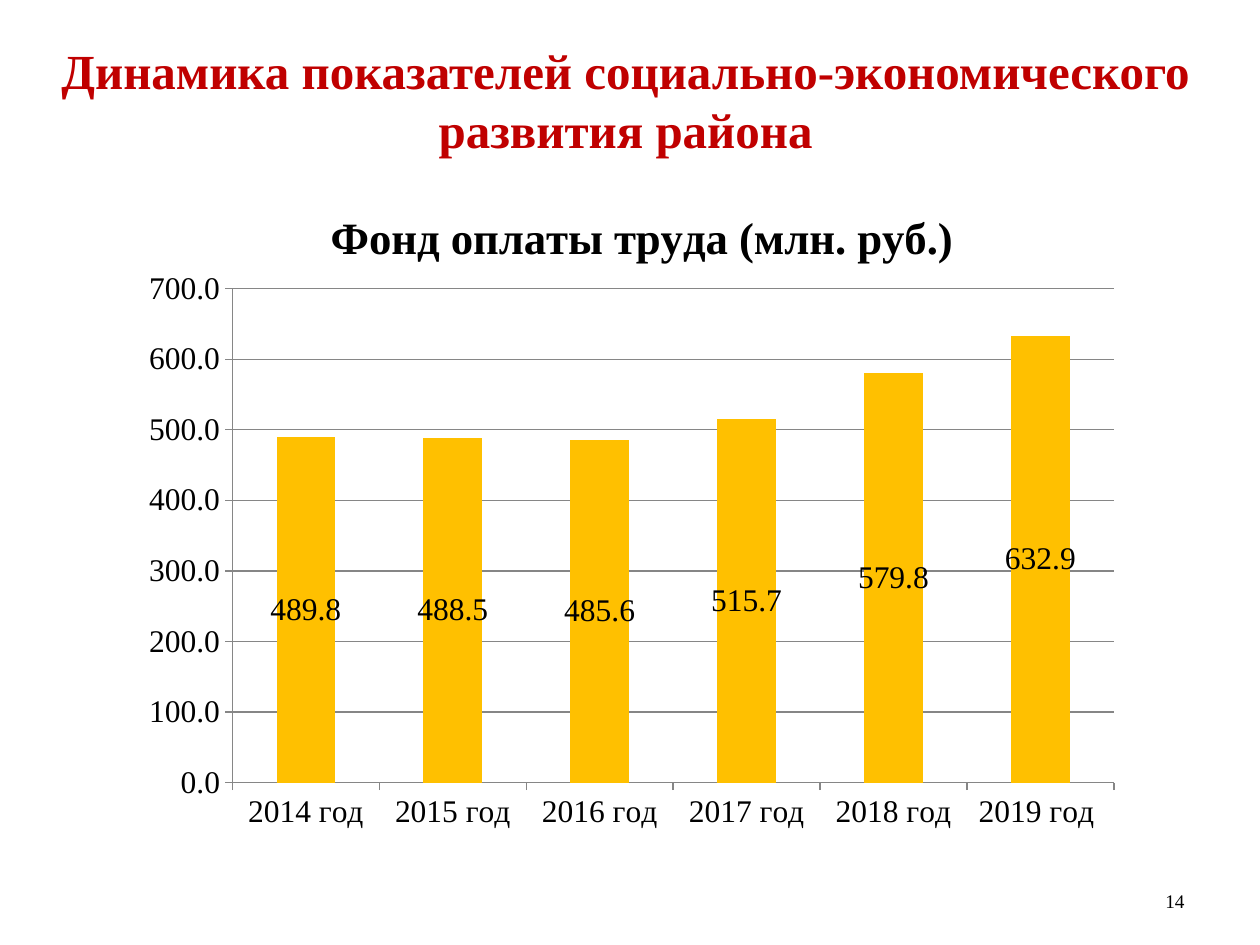
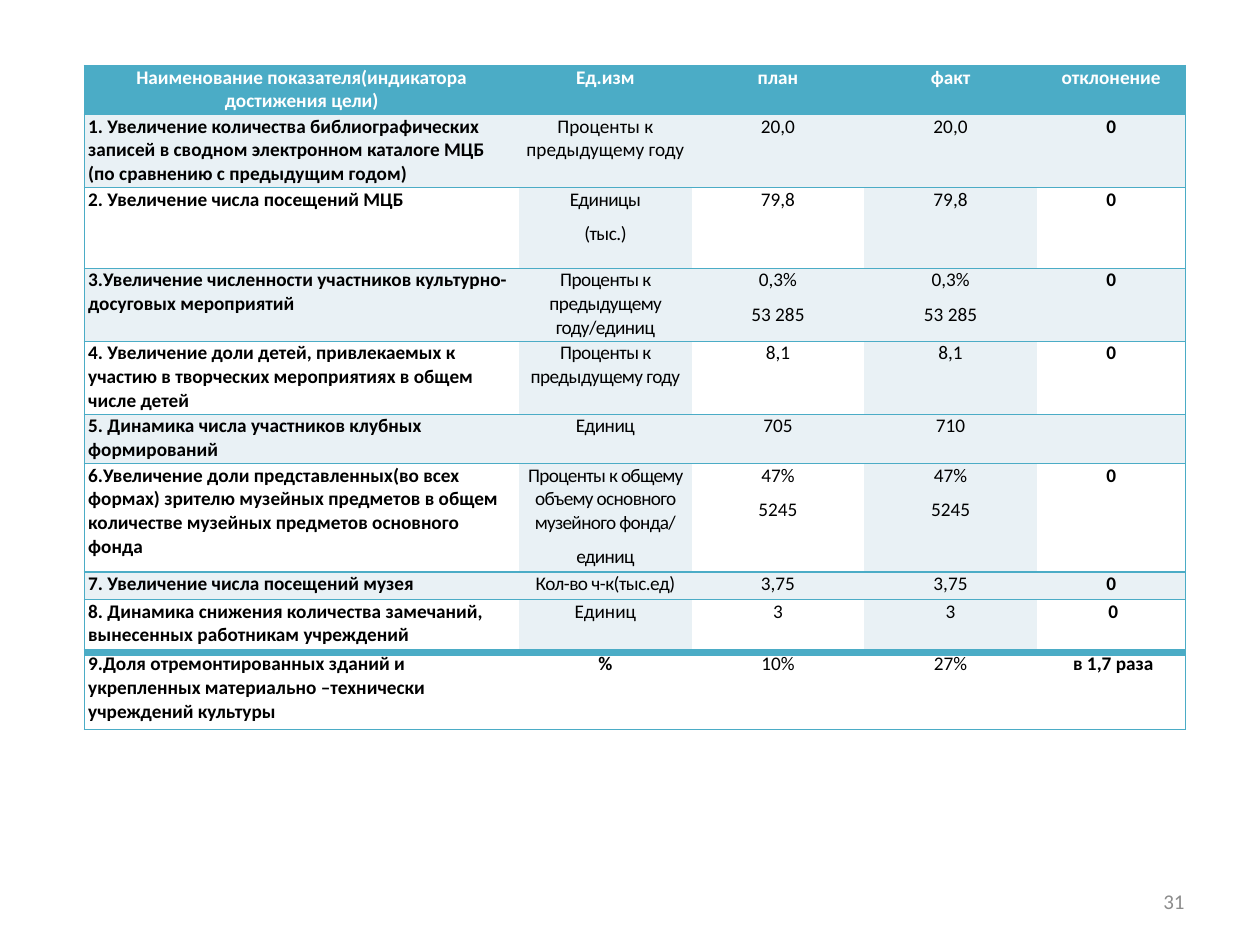
"""Build a wage fund chart slide and a culture indicators table slide."""
import pptx
import pptx.chart.data
import pptx.dml.color
import pptx.enum.chart
import pptx.enum.text
import pptx.oxml
import pptx.oxml.ns
import pptx.util
from pptx.util import Inches, Pt

COLORS = {
    "title": "C00000", "text": "000000", "page": "8C8C8C", "bar": "FFC000",
    "axis": "868686", "teal": "4BACC6", "band": "E9F1F5", "white": "FFFFFF",
}
SERIF = "Times New Roman"
SANS = "Calibri"

TITLE = "Динамика показателей социально-экономического развития района"
CHART_TITLE = "Фонд оплаты труда (млн. руб.)"
WAGE_FUND = {
    "2014 год": 489.8, "2015 год": 488.5, "2016 год": 485.6,
    "2017 год": 515.7, "2018 год": 579.8, "2019 год ": 632.9,
}

HEADER = ("Наименование показателя(индикатора достижения цели)",
          "Ед.изм", "план", "факт", "отклонение")
INDICATORS = [
    ("1. Увеличение количества библиографических записей в сводном электронном "
     "каталоге МЦБ (по сравнению с предыдущим годом)",
     "Проценты к предыдущему году", "20,0", "20,0", "0"),
    ("2. Увеличение числа посещений МЦБ", "Единицы\n(тыс.)", "79,8", "79,8", "0"),
    ("3.Увеличение численности участников культурно-досуговых мероприятий",
     "Проценты к предыдущему году/единиц", "0,3%\n53 285", "0,3%\n53 285", "0"),
    ("4. Увеличение доли детей, привлекаемых к участию в творческих мероприятиях "
     "в общем числе детей", "Проценты к предыдущему году", "8,1", "8,1", "0"),
    ("5. Динамика числа участников клубных формирований", "Единиц", "705", "710", ""),
    ("6.Увеличение доли представленных(во всех формах) зрителю музейных предметов "
     "в общем количестве музейных предметов основного фонда",
     "Проценты к общему объему основного музейного фонда/\nединиц",
     "47%\n5245", "47%\n5245", "0"),
    ("7. Увеличение числа посещений музея", "Кол-во ч-к(тыс.ед)", "3,75", "3,75", "0"),
    ("8. Динамика снижения количества замечаний, вынесенных работникам учреждений",
     "Единиц", "3", "3", " 0"),
    ("9.Доля отремонтированных зданий и укрепленных материально –технически "
     "учреждений культуры", "%", "10%", "27%", " в 1,7 раза"),
]
UNIT_SPACING = (0, 0, -30, -30, -30, -30, -40, -30, 0, 0)
COLUMN_WIDTHS = (3.45, 1.37, 1.37, 1.37, 1.18)
ROW_HEIGHTS = (0.39, 0.58, 0.64, 0.58, 0.58, 0.39, 0.86, 0.22, 0.42, 0.61)
LAST_ROW = len(INDICATORS)
LAST_COLUMN = len(HEADER) - 1
NO_STYLE = "{2D5ABB26-0587-4C30-8999-92F81FD0307C}"


def rgb(name):
    return pptx.dml.color.RGBColor.from_string(COLORS[name])


def style_font(font, name, size, color="text", bold=False):
    font.name, font.size, font.bold = name, Pt(size), bold
    font.color.rgb = rgb(color)


def add_run(paragraph, text, name, size, color="text", bold=False):
    run = paragraph.add_run()
    run.text = text
    style_font(run.font, name, size, color, bold)
    return run


def add_page_number(slide, number, name, size, color):
    box = slide.shapes.add_textbox(Inches(7.17), Inches(6.95), Inches(2.33), Inches(0.4))
    frame = box.text_frame
    frame.word_wrap = True
    frame.vertical_anchor = pptx.enum.text.MSO_ANCHOR.MIDDLE
    paragraph = frame.paragraphs[0]
    paragraph.alignment = pptx.enum.text.PP_ALIGN.RIGHT
    add_run(paragraph, number, name, size, color)


def add_title(slide, text):
    title = slide.shapes.title
    title.left, title.top = Inches(0.2), Inches(0.27)
    title.width, title.height = Inches(9.53), Inches(1.04)
    frame = title.text_frame
    frame.word_wrap = True
    frame.auto_size = pptx.enum.text.MSO_AUTO_SIZE.NONE
    frame.vertical_anchor = pptx.enum.text.MSO_ANCHOR.TOP
    paragraph = frame.paragraphs[0]
    paragraph.alignment = pptx.enum.text.PP_ALIGN.CENTER
    add_run(paragraph, text, SERIF, 28, "title", True)


def layout_element(**settings):
    values = "".join(f'<c:{tag} val="{value}"/>' for tag, value in settings.items())
    return pptx.oxml.parse_xml(
        f'<c:layout {pptx.oxml.ns.nsdecls("c")}><c:manualLayout>{values}'
        "</c:manualLayout></c:layout>")


def place(element, layout, position):
    for old in element.findall(pptx.oxml.ns.qn("c:layout")):
        element.remove(old)
    element.insert(position, layout)


def add_wage_chart(slide):
    data = pptx.chart.data.CategoryChartData(number_format="0.0")
    data.categories = list(WAGE_FUND)
    data.add_series("Series 1", list(WAGE_FUND.values()))
    chart = slide.shapes.add_chart(
        pptx.enum.chart.XL_CHART_TYPE.COLUMN_STACKED,
        Inches(1.05), Inches(1.39), Inches(7.95), Inches(5.3), data).chart
    style_font(chart.font, SERIF, 18)
    chart.has_legend = False
    chart.has_title = True
    paragraph = chart.chart_title.text_frame.paragraphs[0]
    add_run(paragraph, CHART_TITLE, SERIF, 25.6, bold=True)
    place(chart.chart_title._element,
          layout_element(xMode="edge", yMode="edge", x=0.19, y=0.04), 1)
    place(chart._chartSpace.chart.plotArea,
          layout_element(layoutTarget="inner", xMode="edge", yMode="edge",
                         x=0.1, y=0.17, w=0.88, h=0.74), 0)

    value_axis = chart.value_axis
    value_axis.minimum_scale, value_axis.maximum_scale = 0, 700
    value_axis.major_unit = 100
    value_axis.major_gridlines.format.line.color.rgb = rgb("axis")
    value_axis.tick_labels.number_format = "0.0"
    value_axis.tick_labels.number_format_is_linked = False
    for axis in (chart.category_axis, value_axis):
        axis.major_tick_mark = pptx.enum.chart.XL_TICK_MARK.OUTSIDE
        axis.format.line.color.rgb = rgb("axis")
        style_font(axis.tick_labels.font, SERIF, 18)

    plot = chart.plots[0]
    plot.gap_width, plot.overlap = 150, 100
    plot.vary_by_categories = False
    fill = plot.series[0].format.fill
    fill.solid()
    fill.fore_color.rgb = rgb("bar")
    plot.has_data_labels = True
    labels = plot.data_labels
    labels.show_value = True
    labels.number_format, labels.number_format_is_linked = "0.0", False
    labels.position = pptx.enum.chart.XL_LABEL_POSITION.CENTER
    style_font(labels.font, SERIF, 18)


def add_borders(cell, row, column):
    before_last = 4 if row == LAST_ROW else 1
    after_this = 4 if row == LAST_ROW - 1 else 1
    widths = {"lnL": int(column == 0), "lnR": int(column == LAST_COLUMN),
              "lnT": before_last, "lnB": after_this}
    properties = cell._tc.get_or_add_tcPr()
    for tag, width in widths.items():
        if width:
            properties.append(pptx.oxml.parse_xml(
                f'<a:{tag} {pptx.oxml.ns.nsdecls("a")} w="{Pt(width)}"><a:solidFill>'
                f'<a:srgbClr val="{COLORS["teal"]}"/></a:solidFill></a:{tag}>'))


def cell_fill(row, column):
    if row == 0:
        return "teal"
    banded = row % 2 == 1 or column in (1, 3)
    return "band" if banded and row != LAST_ROW else "white"


def fill_cell(cell, text, row, column):
    cell.margin_left = cell.margin_right = Inches(0.03)
    cell.margin_top = cell.margin_bottom = 0
    add_borders(cell, row, column)
    cell.fill.solid()
    cell.fill.fore_color.rgb = rgb(cell_fill(row, column))
    bold = row == 0 or column in (0, LAST_COLUMN) or text == "%"
    for index, line in enumerate(text.split("\n")):
        frame = cell.text_frame
        paragraph = frame.add_paragraph() if index else frame.paragraphs[0]
        if row == 0 or column:
            paragraph.alignment = pptx.enum.text.PP_ALIGN.CENTER
            paragraph.space_after = Pt(6 if row else 3)
        if not line:
            paragraph.font.size = Pt(11)
            continue
        run = add_run(paragraph, line, SANS, 11, "text" if row else "white", bold)
        if column == 1 and UNIT_SPACING[row]:
            run.font._element.set("spc", str(UNIT_SPACING[row]))


def add_indicator_table(slide):
    table = slide.shapes.add_table(
        len(ROW_HEIGHTS), len(COLUMN_WIDTHS), Inches(0.67), Inches(0.52),
        Inches(sum(COLUMN_WIDTHS)), Inches(sum(ROW_HEIGHTS))).table
    table.horz_banding = False
    table._tbl.tblPr.find(pptx.oxml.ns.qn("a:tableStyleId")).text = NO_STYLE
    for column, width in zip(table.columns, COLUMN_WIDTHS):
        column.width = Inches(width)
    for row, height in zip(table.rows, ROW_HEIGHTS):
        row.height = Inches(height)
    for row, texts in enumerate([HEADER, *INDICATORS]):
        for column, text in enumerate(texts):
            fill_cell(table.cell(row, column), text, row, column)


def main():
    presentation = pptx.Presentation()
    presentation.slide_width, presentation.slide_height = Inches(10), Inches(7.5)
    title_only, blank = presentation.slide_layouts[5], presentation.slide_layouts[6]

    wage_slide = presentation.slides.add_slide(title_only)
    add_title(wage_slide, TITLE)
    add_wage_chart(wage_slide)
    add_page_number(wage_slide, "14", SERIF, 11, "text")

    indicator_slide = presentation.slides.add_slide(blank)
    add_page_number(indicator_slide, "31", SANS, 12, "page")
    add_indicator_table(indicator_slide)
    presentation.save("out.pptx")


if __name__ == "__main__":
    main()
